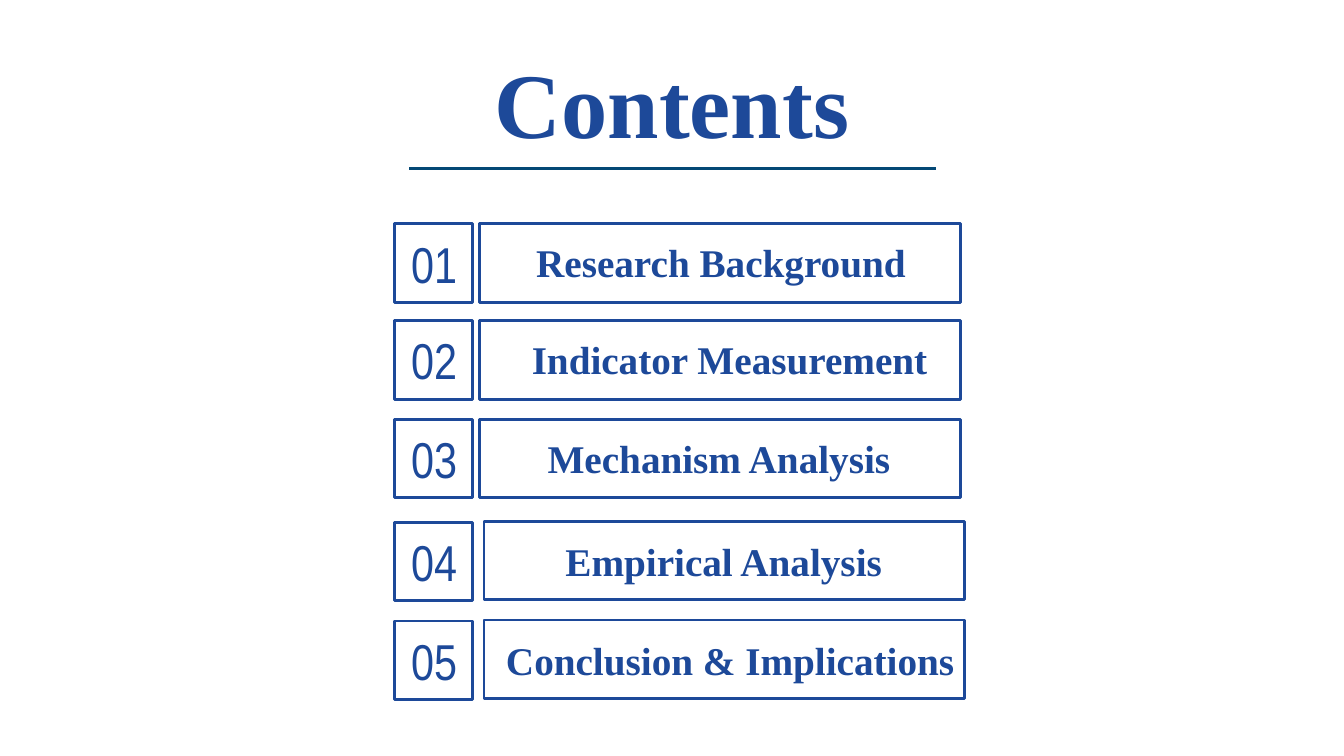
from lxml import etree
from pptx import Presentation
from pptx.dml.color import RGBColor
from pptx.enum.shapes import MSO_CONNECTOR, MSO_SHAPE
from pptx.enum.text import MSO_AUTO_SIZE, PP_ALIGN
from pptx.oxml.ns import qn
from pptx.util import Inches, Pt

RECT = MSO_SHAPE.RECTANGLE
LINE = MSO_CONNECTOR.STRAIGHT
GROW = MSO_AUTO_SIZE.SHAPE_TO_FIT_TEXT
LEFT, CENTER = PP_ALIGN.LEFT, PP_ALIGN.CENTER

COLORS = {"blue": "1D4999", "navy": "044875"}
SERIF, NARROW = "Times New Roman", "Arial Narrow"
WIDTH, HEIGHT = Inches(13.33), Inches(7.5)
COLS, ROWS = 1333, 750
SIDE, BAR = 78, 477

TOPICS = [
    ("Research Background", 222, 85, 0, (117, 414), CENTER),
    ("Indicator Measurement", 318, 85, 0, (118, 429), CENTER),
    ("Mechanism Analysis", 416, 85, 0, (117, 410), CENTER),
    ("Empirical Analysis", 518, 89, -1, (160, 402), LEFT),
    ("Conclusion & Implications", 616, 89, -1, (101, 489), LEFT),
]


def place(x, y, w, h):
    col, row = WIDTH / COLS, HEIGHT / ROWS
    return round(x * col), round(y * row), round(w * col), round(h * row)


def paint(name):
    return RGBColor.from_string(COLORS[name])


def write(shapes, text, box, size, font=SERIF, bold=True, align=CENTER):
    frame = shapes.add_textbox(*place(*box)).text_frame
    frame.word_wrap = True
    frame.auto_size = GROW
    para = frame.paragraphs[0]
    para.alignment = align
    run = para.add_run()
    run.text = text
    run.font.size = Pt(size)
    run.font.name = font
    run.font.bold = bold
    run.font.color.rgb = paint("blue")


def border(shapes, box):
    rect = shapes.add_shape(RECT, *place(*box))
    rect.shadow.inherit = False
    rect.fill.background()
    rect.line.color.rgb = paint("blue")
    rect.line.width = Pt(2)


def header(shapes, box):
    x, y, w, h = box
    write(shapes, "Contents", box, 66)
    left, top, wide, _ = place(x + 105, y + h + 5, 522, 0)
    rule = shapes.add_connector(LINE, left, top, left + wide, top)
    rule.line.color.rgb = paint("navy")
    rule.line.width = Pt(2)
    etree.SubElement(rule._element.spPr, qn("a:effectLst"))


def topic(shapes, box, number, text, inset, shift, label, align):
    x, y, w, h = box
    start, span = label
    group = shapes.add_group_shape().shapes
    border(group, (x + inset, y + shift, w, h))
    border(group, (x, y, SIDE, h))
    write(group, f"{number:02}", (x - 11, y + 4, 101, 71), 36,
          font=NARROW, bold=False)
    write(group, text, (x + start, y + 10, span, 57), 28, align=align)


def main():
    deck = Presentation()
    deck.slide_width, deck.slide_height = WIDTH, HEIGHT
    shapes = deck.slides.add_slide(deck.slide_layouts[6]).shapes
    header(shapes, (301, 41, 731, 121))
    for number, (text, top, *rest) in enumerate(TOPICS, 1):
        topic(shapes, (391, top, BAR, SIDE), number, text, *rest)
    deck.save("out.pptx")


if __name__ == "__main__":
    main()
